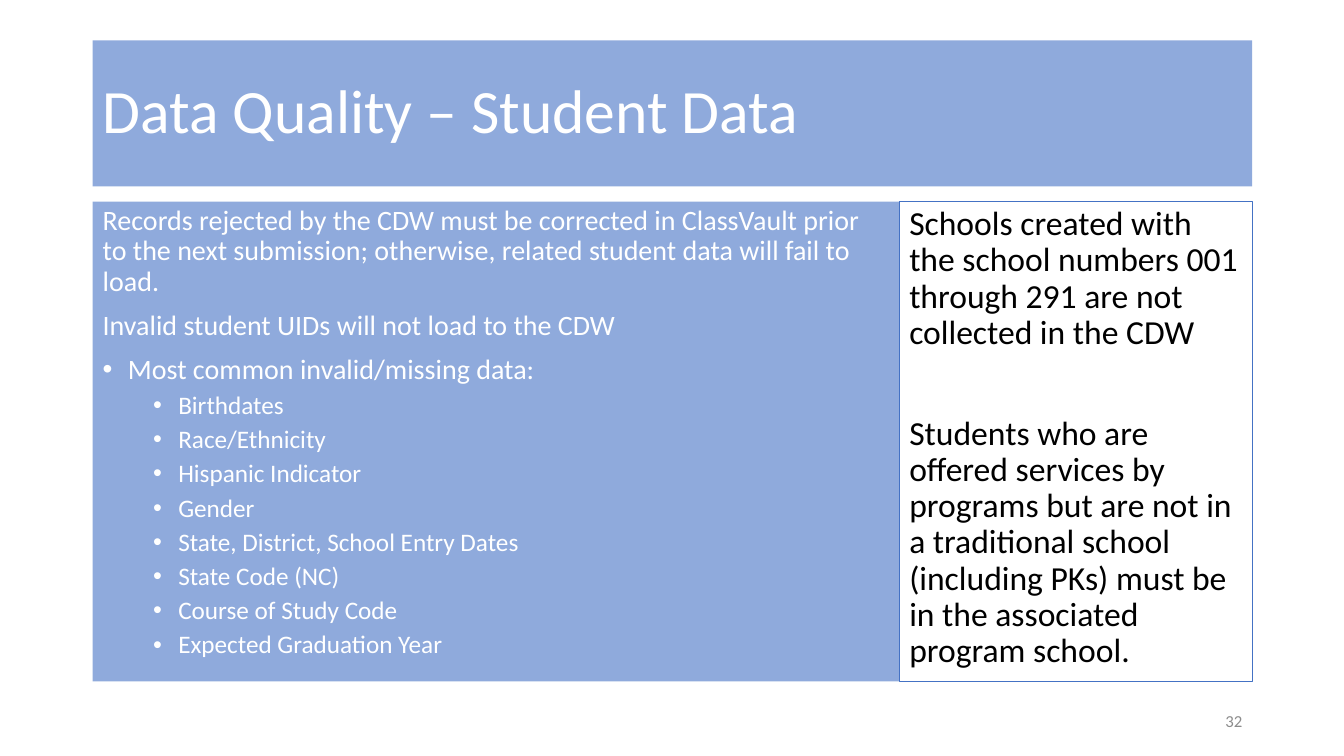
from lxml.etree import SubElement
from pptx import Presentation
from pptx.dml.color import RGBColor
from pptx.enum.shapes import MSO_SHAPE
from pptx.enum.text import MSO_ANCHOR, PP_ALIGN
from pptx.oxml.ns import qn
from pptx.util import Inches, Pt

PANEL_BLUE = "8FAADC"
WHITE = "FFFFFF"
MISSING_DATA = [
    "Birthdates",
    "Race/Ethnicity",
    "Hispanic Indicator",
    "Gender",
    "State, District, School Entry Dates",
    "State Code (NC)",
    "Course of Study Code",
    "Expected Graduation Year",
]


def color(value):
    """Turn a hex string into a colour."""
    return RGBColor.from_string(value)


def add_panel(page, left, top, width, height, fill=None, line=None, anchor=MSO_ANCHOR.TOP):
    """Add a rectangle and return its text frame."""
    panel = page.shapes.add_shape(
        MSO_SHAPE.RECTANGLE, Inches(left), Inches(top), Inches(width), Inches(height)
    )
    panel.shadow.inherit = False
    if fill:
        panel.fill.solid()
        panel.fill.fore_color.rgb = color(fill)
    else:
        panel.fill.background()
    if line:
        panel.line.color.rgb = color(line)
        panel.line.width = Pt(0.5)
    else:
        panel.line.fill.background()
    frame = panel.text_frame
    frame.word_wrap = True
    frame.vertical_anchor = anchor
    return frame


def add_bullet(para, indent):
    """Give a paragraph a hanging bullet at an indent in inches."""
    properties = para._p.get_or_add_pPr()
    properties.set("marL", str(Inches(indent)))
    properties.set("indent", str(Inches(-0.25)))
    SubElement(properties, qn("a:buFont"), typeface="Arial")
    SubElement(properties, qn("a:buChar"), char="•")


def add_text(frame, text, size=20, ink=WHITE, before=10, spacing=0.9,
             align=PP_ALIGN.LEFT, level=0, indent=None):
    """Write a formatted paragraph into a text frame."""
    first = not frame.text
    para = frame.paragraphs[0] if first else frame.add_paragraph()
    para.alignment = align
    para.level = level
    para.line_spacing = spacing
    para.space_before = Pt(0 if first else before)
    if indent is not None:
        add_bullet(para, indent)
    span = para.add_run()
    span.text = text
    span.font.name = "Calibri"
    span.font.size = Pt(size)
    span.font.color.rgb = color(ink)


def add_records(page):
    """Add the panel on rejected records and missing data."""
    records = add_panel(page, 0.92, 2, 8, 4.76, fill=PANEL_BLUE)
    add_text(records, "Records rejected by the CDW must be corrected in ClassVault "
             "prior to the next submission; otherwise, related student data will fail to load.")
    add_text(records, "Invalid student UIDs will not load to the CDW")
    add_text(records, "Most common invalid/missing data:", indent=0.25)
    for item in MISSING_DATA:
        add_text(records, item, size=18, before=5, level=1, indent=0.75)


def add_schools(page):
    """Add the outlined panel on school numbers."""
    schools = add_panel(page, 8.92, 2, 3.5, 4.76, line="4472C4")
    add_text(schools, "Schools created with the school numbers 001 through 291 "
             "are not collected in the CDW", size=24, ink="000000")
    add_text(schools, "Students who are offered services by programs but are not in a "
             "traditional school (including PKs) must be in the associated program school.",
             size=24, ink="000000", before=46)


def add_page_number(page):
    """Add the page number at the lower right."""
    box = page.shapes.add_textbox(Inches(9.42), Inches(6.95), Inches(3), Inches(0.4))
    box.text_frame.word_wrap = True
    box.text_frame.vertical_anchor = MSO_ANCHOR.MIDDLE
    add_text(box.text_frame, "32", size=12, ink="8C8C8C", spacing=1, align=PP_ALIGN.RIGHT)


def main():
    """Build and save the deck."""
    deck = Presentation()
    deck.slide_width = Inches(13.33)
    deck.slide_height = Inches(7.5)
    page = deck.slides.add_slide(deck.slide_layouts[6])
    title = add_panel(page, 0.92, 0.4, 11.5, 1.45, fill=PANEL_BLUE, anchor=MSO_ANCHOR.MIDDLE)
    add_text(title, "Data Quality – Student Data", size=44)
    add_records(page)
    add_schools(page)
    add_page_number(page)
    deck.save("out.pptx")


if __name__ == "__main__":
    main()
